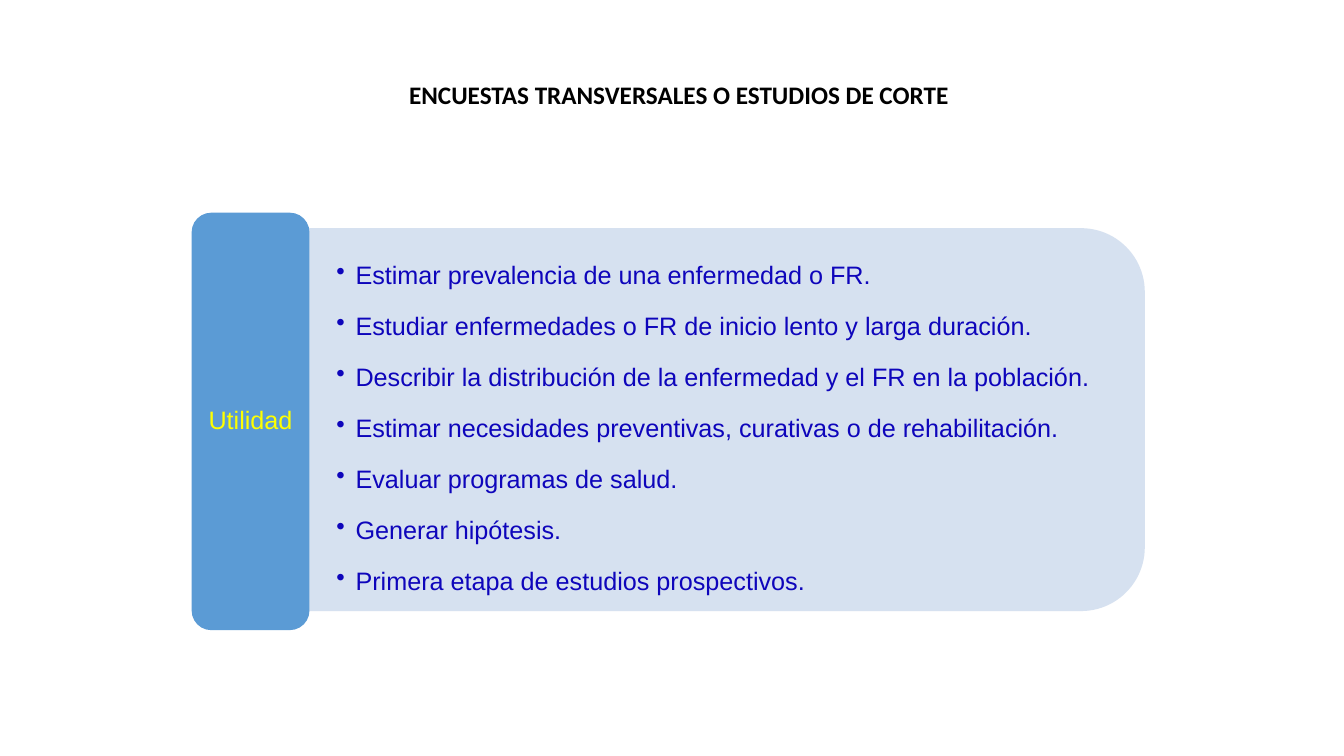
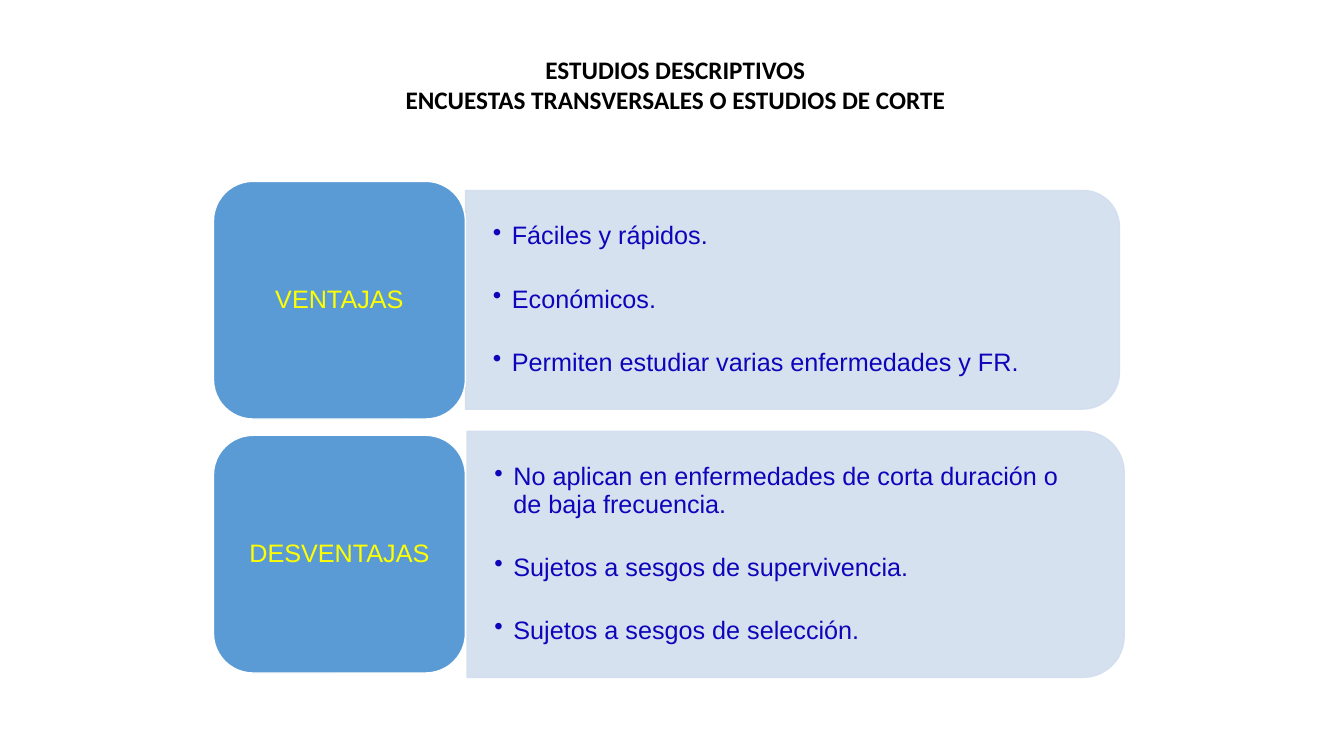
from lxml import etree
from pptx import Presentation
from pptx import util as u
from pptx.dml.color import RGBColor
from pptx.enum import shapes, text
from pptx.oxml import ns

Cm, Pt = u.Cm, u.Pt
BLACK = RGBColor(0x00, 0x00, 0x00)
WHITE = RGBColor(0xFF, 0xFF, 0xFF)
BLUE = RGBColor(0x5B, 0x9B, 0xD5)
PALE = RGBColor(0xD2, 0xDE, 0xEF)
INK = RGBColor(0x0E, 0x05, 0xBB)
YELLOW = RGBColor(0xFF, 0xFF, 0x00)
CENTER, LEFT = text.PP_ALIGN.CENTER, text.PP_ALIGN.LEFT


def write_text(tf, lines, color, font="Arial", bold=False, align=LEFT,
               spacing=1.0, gap=0, bullet=False, inset=(0.25, 0.13)):
    """Fill a text frame with one paragraph per line."""
    tf.word_wrap = True
    tf.vertical_anchor = text.MSO_ANCHOR.MIDDLE
    tf.margin_left = tf.margin_right = Cm(inset[0])
    tf.margin_top = tf.margin_bottom = Cm(inset[1])
    for i, line in enumerate(lines):
        p = tf.add_paragraph() if i else tf.paragraphs[0]
        if bullet:
            pPr = p._p.get_or_add_pPr()
            pPr.set("marL", str(Cm(0.48)))
            pPr.set("indent", str(-Cm(0.48)))
            etree.SubElement(pPr, ns.qn("a:buChar")).set("char", "•")
        p.alignment = align
        p.line_spacing = spacing
        if i and gap:
            p.space_before = Pt(gap)
        r = p.add_run()
        r.text = line
        r.font.name, r.font.size, r.font.bold = font, Pt(18), bold
        r.font.color.rgb = color


def paint(sp, fill, line=None, alpha=100):
    """Give a shape a flat fill and an optional 1 pt outline."""
    sp.shadow.inherit = False
    sp.fill.solid()
    sp.fill.fore_color.rgb = fill
    if line is None:
        sp.line.fill.background()
    else:
        sp.line.color.rgb = line
        sp.line.width = Pt(1)
    if alpha < 100:
        for clr in sp._element.spPr.iter(ns.qn("a:srgbClr")):
            etree.SubElement(clr, ns.qn("a:alpha")).set("val", str(alpha * 1000))


# Content: boxes are left, top, width, height in cm
SURVEYS = "ENCUESTAS TRANSVERSALES O ESTUDIOS DE CORTE"
slides = [
    dict(title=[SURVEYS], title_box=(10.06, 0.99, 17.86, 2.77), align=LEFT,
         spacing=1.5, gap=4, outlined=False, rows=[
             ("Utilidad", (4.83, 5.36, 2.97, 10.52), (7.79, 5.75, 21.06, 9.65), [
                 "Estimar prevalencia de una enfermedad o FR.",
                 "Estudiar enfermedades o FR de inicio lento y larga duración.",
                 "Describir la distribución de la enfermedad y el FR en la población.",
                 "Estimar necesidades preventivas, curativas o de rehabilitación.",
                 "Evaluar programas de salud.",
                 "Generar hipótesis.",
                 "Primera etapa de estudios prospectivos."])]),
    dict(title=["ESTUDIOS DESCRIPTIVOS", SURVEYS],
         title_box=(1.5, 0.74, 31.04, 2.77), align=CENTER,
         spacing=0.9, gap=25.6, outlined=True, rows=[
             ("VENTAJAS", (5.38, 4.57, 6.35, 5.99), (11.73, 4.8, 16.48, 5.51), [
                 "Fáciles y rápidos.",
                 "Económicos.",
                 "Permiten estudiar varias enfermedades y FR."]),
             ("DESVENTAJAS", (5.38, 10.97, 6.35, 5.99), (11.77, 10.87, 16.56, 6.2), [
                 "No aplican en enfermedades de corta duración o de baja frecuencia.",
                 "Sujetos a sesgos de supervivencia.",
                 "Sujetos a sesgos de selección."])]),
]

prs = Presentation()
prs.slide_width, prs.slide_height = Cm(33.87), Cm(19.05)

for content in slides:
    s = prs.slides.add_slide(prs.slide_layouts[6])

    for label, label_box, (x, y, w, h), points in content["rows"]:
        # Panel: a shape with two rounded top corners, turned to the right
        sp = s.shapes.add_shape(shapes.MSO_SHAPE.ROUND_2_SAME_RECTANGLE,
                                Cm(x + (w - h) / 2), Cm(y + (h - w) / 2), Cm(h), Cm(w))
        sp.rotation = 90
        paint(sp, PALE, PALE if content["outlined"] else None, alpha=90)

        # Bullet points, kept clear of the rounded corners
        corner = 0.05 * h
        tb = s.shapes.add_textbox(Cm(x), Cm(y + corner), Cm(w - corner), Cm(h - 2 * corner))
        write_text(tb.text_frame, points, INK, spacing=content["spacing"],
                   gap=content["gap"], bullet=True, inset=(0.69, 0.36))

        # Label
        sp = s.shapes.add_shape(shapes.MSO_SHAPE.ROUNDED_RECTANGLE, *map(Cm, label_box))
        paint(sp, BLUE, WHITE if content["outlined"] else None)
        write_text(sp.text_frame, [label], YELLOW, align=CENTER, spacing=0.9,
                   inset=(0.18, 0.1))

    # Title
    tb = s.shapes.add_textbox(*map(Cm, content["title_box"]))
    write_text(tb.text_frame, content["title"], BLACK, font="Calibri", bold=True,
               align=content["align"])

prs.save("out.pptx")
